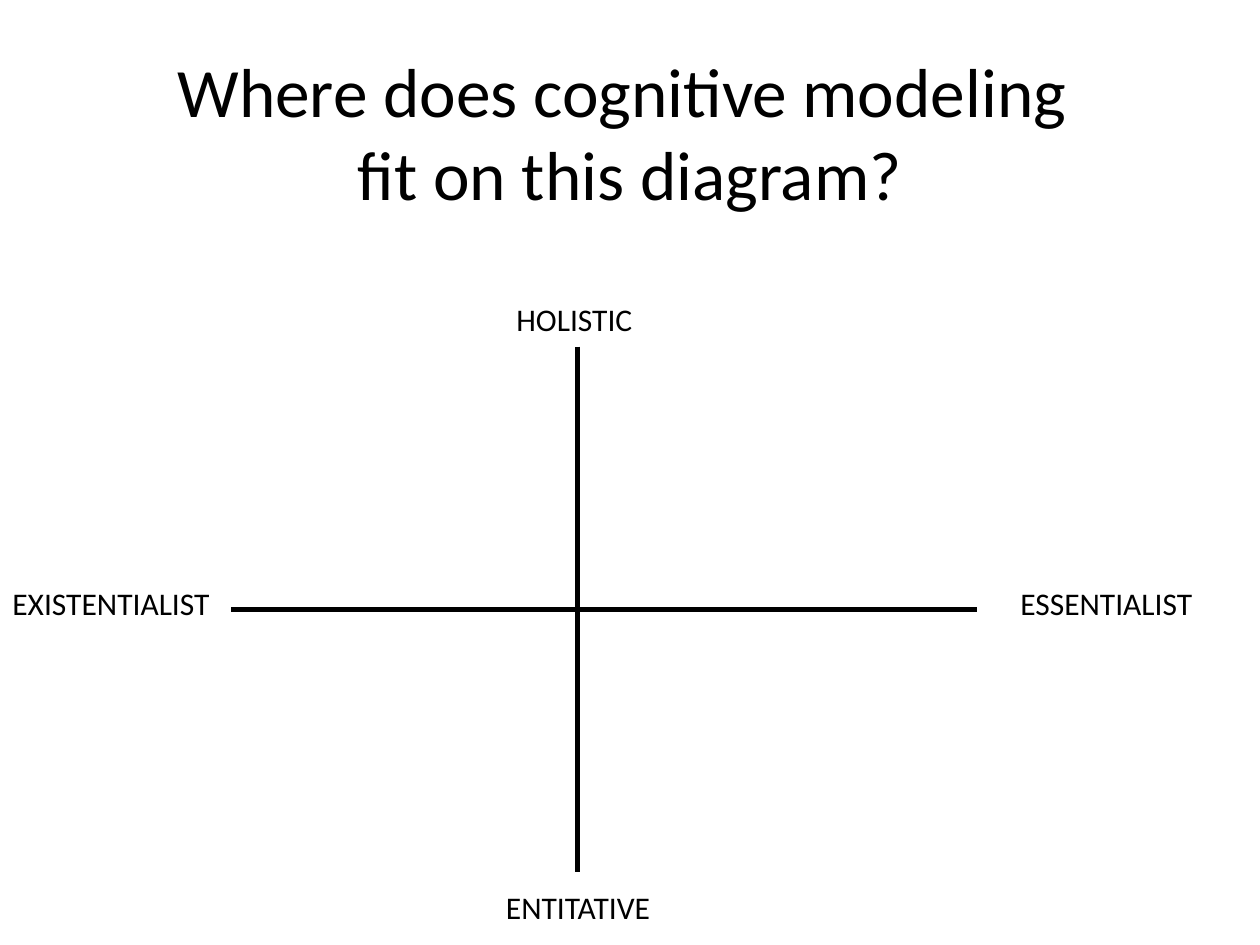
from pptx import Presentation
from pptx.dml.color import RGBColor
from pptx.enum.shapes import MSO_CONNECTOR as Connector
from pptx.enum.text import MSO_ANCHOR as Anchor, PP_ALIGN as Align
from pptx.oxml.ns import qn
from pptx.util import Cm, Pt
from lxml.etree import SubElement

BLACK = RGBColor(0, 0, 0)
WHITE = RGBColor(255, 255, 255)


def write_text(frame, text, *, font, size, color, align=Align.LEFT, anchor=Anchor.TOP):
    frame.word_wrap = True
    frame.vertical_anchor = anchor
    para = frame.paragraphs[0]
    para.text = text
    para.alignment = align
    for span in para.runs:
        span.font.name = font
        span.font.size = Pt(size)
        span.font.color.rgb = color


class DiagramPage:
    font = "Calibri"
    ink = BLACK
    title_size = 39.6
    label_size = 18
    label_height = 1.02
    axis_width = 3

    def __init__(self, deck):
        self.page = deck.slides.add_slide(deck.slide_layouts[6])
        fill = self.page.background.fill
        fill.solid()
        fill.fore_color.rgb = WHITE

    def text(self, text, left, top, width, height, size, **layout):
        box = self.page.shapes.add_textbox(Cm(left), Cm(top), Cm(width), Cm(height))
        write_text(box.text_frame, text, font=self.font, size=size,
                   color=self.ink, **layout)

    def title(self, text, left, top, width, height):
        self.text(text, left, top, width, height, self.title_size,
                  align=Align.CENTER, anchor=Anchor.MIDDLE)

    def label(self, text, left, top, width):
        self.text(text, left, top, width, self.label_height, self.label_size)

    def axis(self, x1, y1, x2, y2):
        axis = self.page.shapes.add_connector(
            Connector.STRAIGHT, Cm(x1), Cm(y1), Cm(x2), Cm(y2))
        axis.line.color.rgb = self.ink
        axis.line.width = Pt(self.axis_width)
        SubElement(axis._element.spPr, qn("a:effectLst"))


def main():
    deck = Presentation()
    deck.slide_width = Cm(25.4)
    deck.slide_height = Cm(19.05)

    diagram = DiagramPage(deck)
    diagram.title("Where does cognitive modeling \vfit on this diagram?",
                  1.27, 1.07, 22.86, 3.17)

    center_x, center_y = 11.64, 12.28
    diagram.axis(center_x, 6.99, center_x, 17.57)
    diagram.axis(4.66, center_y, 19.69, center_y)

    side_top = 11.64
    for text, left, top, width in (
        ("ENTITATIVE", 9.95, 17.78, 3.6),
        ("HOLISTIC", 10.16, 5.93, 3.6),
        ("ESSENTIALIST", 20.32, side_top, 4.02),
        ("EXISTENTIALIST", 0, side_top, 5.08),
    ):
        diagram.label(text, left, top, width)

    deck.save("out.pptx")


if __name__ == "__main__":
    main()
